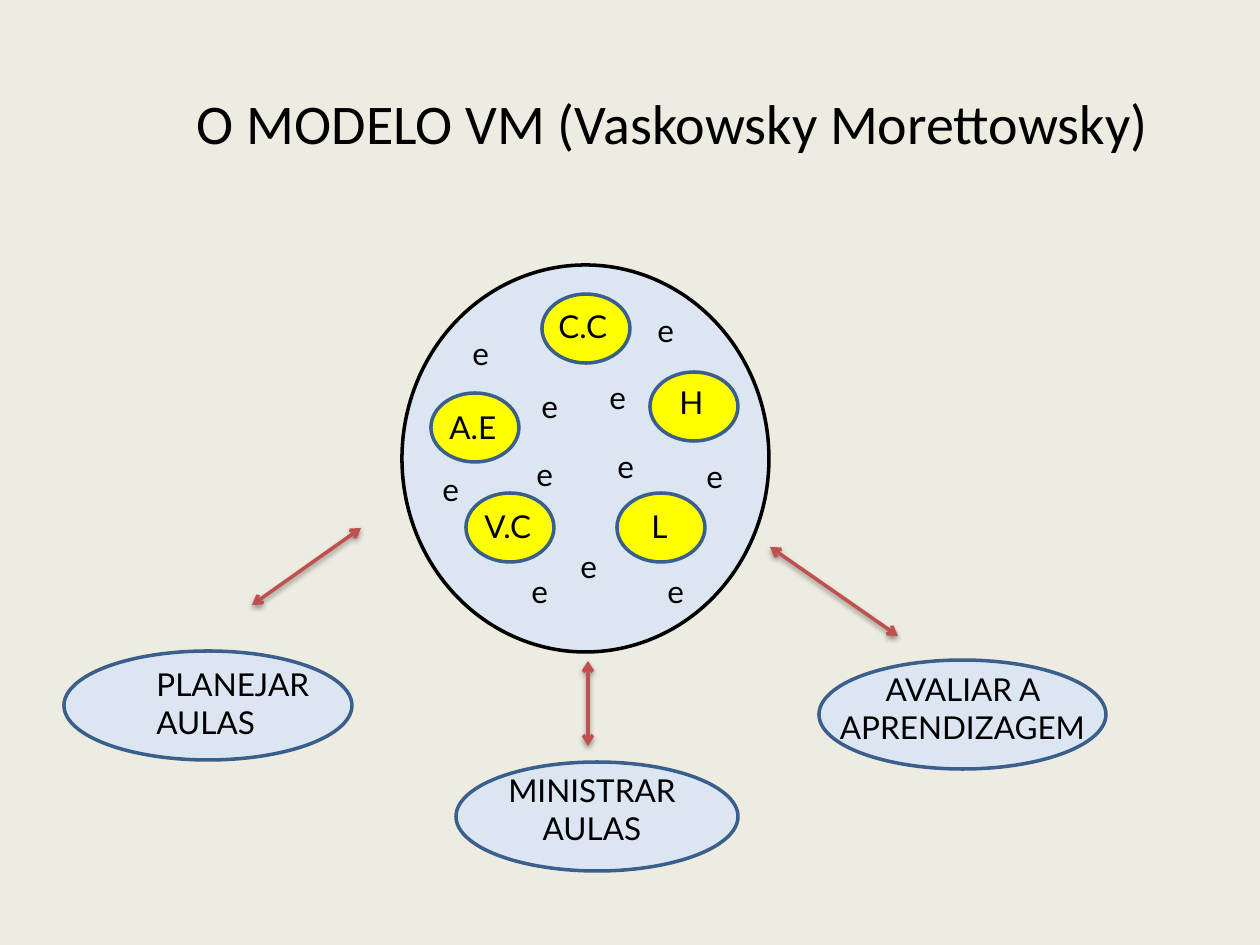
from lxml.etree import SubElement
from pptx import Presentation
from pptx.dml.color import RGBColor
from pptx.enum.shapes import MSO_CONNECTOR, MSO_SHAPE
from pptx.enum.text import MSO_ANCHOR, PP_ALIGN
from pptx.oxml.ns import qn
from pptx.util import Pt

EMU_PER_PX = 914400 / 126
WIDTH, HEIGHT = 1260, 945
CREAM, PALE, YELLOW = "EEECE1", "DCE6F2", "FFFF00"
BLACK, NAVY, RED = "000000", "3A5F8C", "C0504D"

TITLE = ("O MODELO VM (Vaskowsky Morettowsky)", (140, 76, 1065, 93))
CORE = (402, 265, 367, 387)
NODE_SIZE = (88, 69)
LABEL_HEIGHT, STEP_HEIGHT = 50, 89
# node corner, label, label left, top and width
NODES = [
    ((431, 393), "A.E", (437, 402, 82)),
    ((466, 493), "V.C", (472, 501, 92)),
    ((617, 493), "L", (639, 501, 66)),
    ((650, 372), "H", (667, 377, 67)),
    ((542, 294), "C.C", (546, 301, 89)),
]
ELEMENTS = [
    (568, 541, 40), (605, 441, 49), (430, 464, 40), (460, 328, 49),
    (645, 305, 49), (529, 381, 49), (694, 451, 40), (524, 449, 59),
    (519, 566, 49), (597, 372, 40), (655, 566, 40),
]
STEPS = [
    ((64, 651, 288, 109), "PLANEJAR AULAS", (144, 659, 218), PP_ALIGN.LEFT),
    ((456, 762, 282, 109), "MINISTRAR AULAS", (488, 765, 208), PP_ALIGN.CENTER),
    ((819, 660, 287, 109), "AVALIAR A APRENDIZAGEM", (809, 664, 307), PP_ALIGN.CENTER),
]
ARROWS = [(252, 605, 361, 528), (588, 661, 588, 746), (770, 547, 898, 636)]


def px(*values):
    return [round(value * EMU_PER_PX) for value in values]


def color(code):
    return RGBColor.from_string(code)


def add_text(page, text, area, size=18, font="Lato", align=PP_ALIGN.LEFT,
             anchor=MSO_ANCHOR.TOP):
    box = page.shapes.add_textbox(*px(*area))
    frame = box.text_frame
    frame.word_wrap = True
    frame.vertical_anchor = anchor
    para = frame.paragraphs[0]
    para.alignment = align
    span = para.add_run()
    span.text = text
    span.font.size = Pt(size)
    span.font.name = font
    span.font.color.rgb = color(BLACK)


def add_ellipse(page, area, fill, line=NAVY):
    shape = page.shapes.add_shape(MSO_SHAPE.OVAL, *px(*area))
    shape.shadow.inherit = False
    shape.fill.solid()
    shape.fill.fore_color.rgb = color(fill)
    shape.line.color.rgb = color(line)
    shape.line.width = Pt(2)


def add_arrow(page, ends):
    arrow = page.shapes.add_connector(MSO_CONNECTOR.STRAIGHT, *px(*ends))
    arrow.line.color.rgb = color(RED)
    arrow.line.width = Pt(2)
    outline = arrow.line._get_or_add_ln()
    for end in ("a:headEnd", "a:tailEnd"):
        SubElement(outline, qn(end), type="arrow")
    effects = SubElement(arrow._element.spPr, qn("a:effectLst"))
    shadow = SubElement(effects, qn("a:outerShdw"), blurRad="40000",
                        dist="20000", dir="5400000", rotWithShape="0")
    tint = SubElement(shadow, qn("a:srgbClr"), val=BLACK)
    SubElement(tint, qn("a:alpha"), val="38000")


def main():
    """Build the slide of the VM model and save it."""
    deck = Presentation()
    deck.slide_width, deck.slide_height = px(WIDTH, HEIGHT)
    page = deck.slides.add_slide(deck.slide_layouts[6])
    page.background.fill.solid()
    page.background.fill.fore_color.rgb = color(CREAM)

    add_text(page, *TITLE, size=32, font="Calibri", align=PP_ALIGN.CENTER,
             anchor=MSO_ANCHOR.MIDDLE)
    add_ellipse(page, CORE, PALE, line=BLACK)
    for corner, label, place in NODES:
        add_ellipse(page, corner + NODE_SIZE, YELLOW)
        add_text(page, label, place + (LABEL_HEIGHT,))
    for place in ELEMENTS:
        add_text(page, "e", place + (LABEL_HEIGHT,))
    for area, label, place, align in STEPS:
        add_ellipse(page, area, PALE)
        add_text(page, label, place + (STEP_HEIGHT,), align=align)
    for ends in ARROWS:
        add_arrow(page, ends)
    deck.save("out.pptx")


if __name__ == "__main__":
    main()
